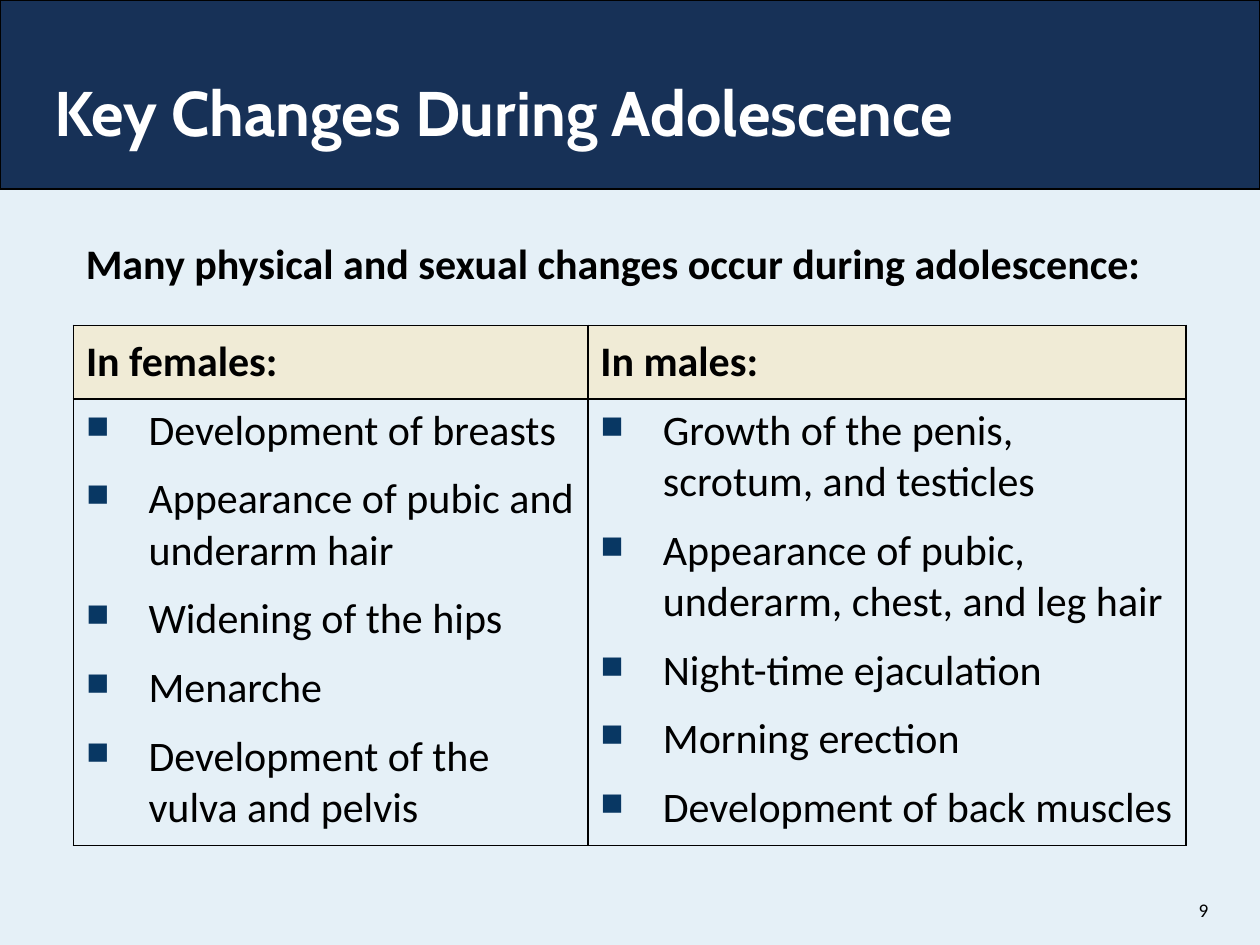
"""Build a slide that compares key changes during adolescence."""
from dataclasses import dataclass

import lxml.etree
import pptx
import pptx.dml.color
import pptx.enum.shapes
import pptx.enum.text
import pptx.oxml.ns
import pptx.util

Cm = pptx.util.Cm
Pt = pptx.util.Pt
RGB = pptx.dml.color.RGBColor.from_string
Align = pptx.enum.text.PP_ALIGN
Anchor = pptx.enum.text.MSO_ANCHOR
qn = pptx.oxml.ns.qn


@dataclass(frozen=True)
class Theme:
    """Hold the colours, fonts and type sizes."""
    navy: str = "173157"
    pale: str = "E5F0F7"
    cream: str = "F0EBD6"
    mark: str = "083763"
    ink: str = "000000"
    white: str = "FFFFFF"
    head: str = "Cabin"
    body: str = "Calibri"
    big: int = 36
    text: int = 24
    small: int = 11


THEME = Theme()

LISTS = {
    "In females:": [
        "Development of breasts",
        "Appearance of pubic and underarm hair",
        "Widening of the hips",
        "Menarche",
        "Development of the vulva and pelvis",
    ],
    "In males:": [
        "Growth of the penis, scrotum, and testicles",
        "Appearance of pubic, underarm, chest, and leg hair",
        "Night-time ejaculation",
        "Morning erection",
        "Development of back muscles",
    ],
}


def style(para, size, bold=False, color=THEME.ink, face=THEME.body):
    """Format every run of a paragraph."""
    for run in para.runs:
        font = run.font
        font.size, font.bold, font.name = Pt(size), bold, face
        font.color.rgb = RGB(color)


def add_band(slide, width):
    """Add the title band behind the title."""
    band = slide.shapes.add_shape(
        pptx.enum.shapes.MSO_SHAPE.RECTANGLE, 0, 0, width, Cm(3.81))
    band.shadow.inherit = False
    band.fill.solid()
    band.fill.fore_color.rgb = RGB(THEME.navy)
    band.line.color.rgb = RGB(THEME.ink)
    band.line.width = Pt(0.75)
    slide.shapes.title.element.addprevious(band.element)


def set_title(slide, text):
    """Place and format the title."""
    title = slide.shapes.title
    title.left, title.top = Cm(0.84), Cm(1.35)
    title.width, title.height = Cm(23.5), Cm(3.1)
    frame = title.text_frame
    frame.text = text
    frame.auto_size = pptx.enum.text.MSO_AUTO_SIZE.NONE
    frame.vertical_anchor = Anchor.TOP
    para = frame.paragraphs[0]
    para.alignment = Align.LEFT
    style(para, THEME.big, True, THEME.white, THEME.head)


def add_text(slide, text, box, size, bold=False, align=Align.LEFT,
             anchor=Anchor.TOP):
    """Add a wrapped line of text in a box."""
    frame = slide.shapes.add_textbox(*map(Cm, box)).text_frame
    frame.word_wrap = True
    frame.vertical_anchor = anchor
    frame.text = text
    para = frame.paragraphs[0]
    para.alignment = align
    style(para, size, bold)


def add_bullet(para):
    """Give a paragraph a hanging square bullet."""
    para.space_before = Pt(10)
    props = para._p.get_or_add_pPr()
    props.set("marL", str(Cm(1.26)))
    props.set("indent", str(-Cm(1.26)))
    color = lxml.etree.SubElement(props, qn("a:buClr"))
    lxml.etree.SubElement(color, qn("a:srgbClr"), val=THEME.mark)
    lxml.etree.SubElement(props, qn("a:buSzPct"), val="75000")
    lxml.etree.SubElement(props, qn("a:buChar"), char="■")


def frame_cell(cell, fill):
    """Draw the borders of a cell and fill it."""
    props = cell._tc.get_or_add_tcPr()
    for side in ("lnL", "lnR", "lnT", "lnB"):
        line = lxml.etree.SubElement(props, qn("a:" + side), w=str(Pt(1)))
        paint = lxml.etree.SubElement(line, qn("a:solidFill"))
        lxml.etree.SubElement(paint, qn("a:srgbClr"), val=THEME.ink)
    cell.fill.solid()
    cell.fill.fore_color.rgb = RGB(fill)


def add_lists(slide, lists):
    """Add a table with one headed list per column."""
    table = slide.shapes.add_table(
        2, len(lists), Cm(1.48), Cm(6.56), Cm(22.43), Cm(10.48)).table
    table.horz_banding = False
    for row, high in zip(table.rows, (1.48, 9)):
        row.height = Cm(high)
    for col, wide in zip(table.columns, (10.37, 12.06)):
        col.width = Cm(wide)
    for num, (name, items) in enumerate(lists.items()):
        head, body = table.cell(0, num), table.cell(1, num)
        frame_cell(head, THEME.cream)
        frame_cell(body, THEME.pale)
        head.text_frame.text = name
        head.vertical_anchor = Anchor.MIDDLE
        style(head.text_frame.paragraphs[0], THEME.text, True)
        body.text_frame.text = "\n".join(items)
        for para in body.text_frame.paragraphs:
            add_bullet(para)
            style(para, THEME.text)


def main():
    """Build and save the slide."""
    deck = pptx.Presentation()
    deck.slide_width, deck.slide_height = Cm(25.4), Cm(19.05)
    slide = deck.slides.add_slide(deck.slide_layouts[5])
    slide.background.fill.solid()
    slide.background.fill.fore_color.rgb = RGB(THEME.pale)
    add_band(slide, deck.slide_width)
    set_title(slide, "Key Changes During Adolescence")
    add_text(slide, "Many physical and sexual changes occur during adolescence:",
             (1.48, 4.66, 22.86, 1.9), THEME.text, True)
    add_lists(slide, LISTS)
    add_text(slide, "9", (23.06, 17.83, 1.55, 1.02), THEME.small,
             align=Align.RIGHT, anchor=Anchor.MIDDLE)
    deck.save("out.pptx")


if __name__ == "__main__":
    main()
